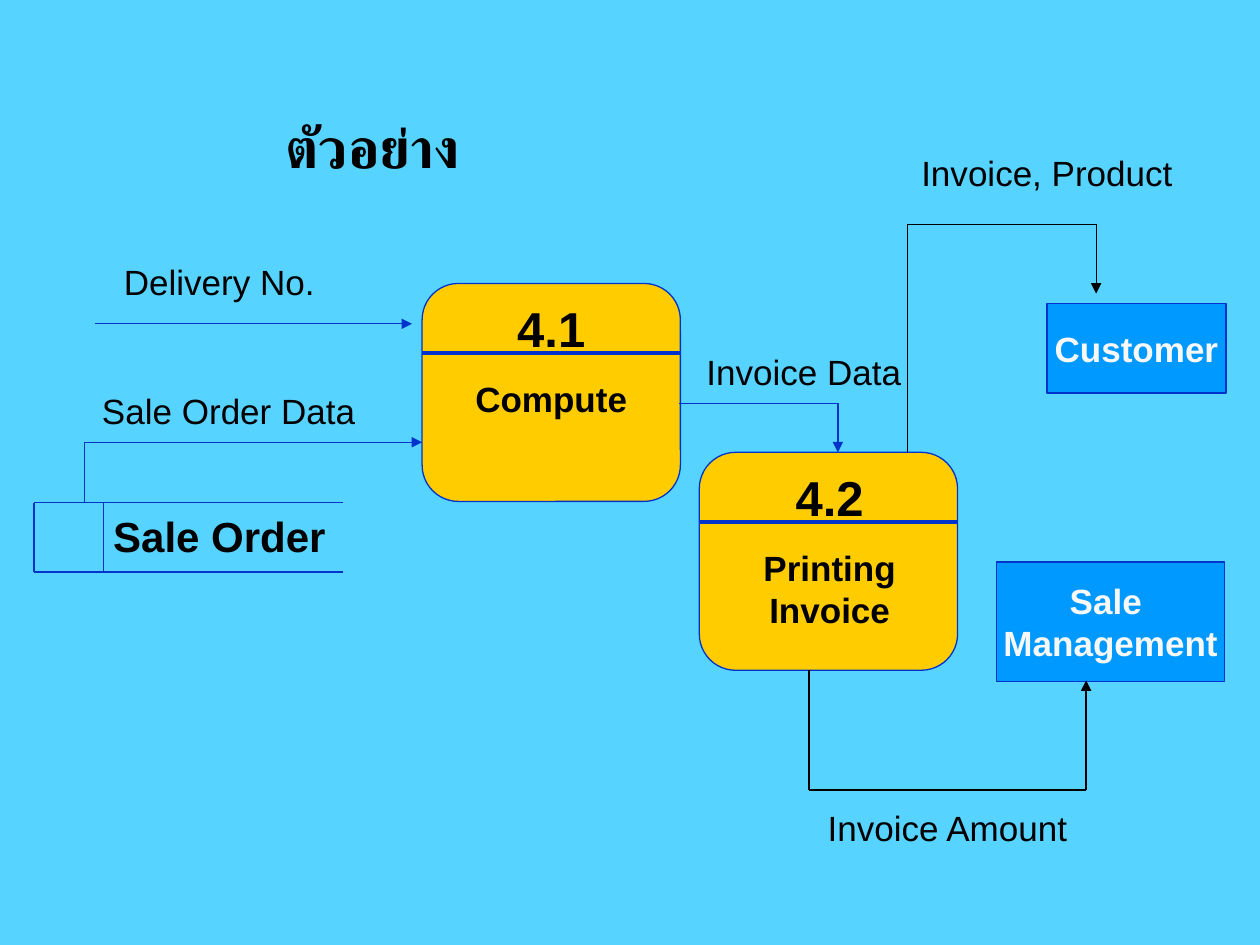
from dataclasses import dataclass
from itertools import pairwise

from lxml import etree
from pptx import Presentation
from pptx.dml.color import RGBColor
from pptx.enum.shapes import MSO_CONNECTOR as Connector, MSO_SHAPE as Shape
from pptx.enum.text import MSO_ANCHOR as Anchor, PP_ALIGN as Align
from pptx.oxml.ns import qn
from pptx.util import Inches, Pt

BLACK, BLUE, SKY = "000000", "0033CC", "57D3FF"
YELLOW, AZURE, WHITE = "FFCC00", "0099FF", "F8F8F8"

Point = tuple[float, float]
Box = tuple[float, float, float, float]


@dataclass
class Line:
    text: str
    size: float = 20
    bold: bool = False
    color: str = BLACK
    font: str = "Arial"
    space_before: float = 0


@dataclass
class Process:
    left: float
    top: float
    number: str
    name: list[str]
    text_box: Box


@dataclass
class Entity:
    box: Box
    name: list[str]


@dataclass
class Flow:
    points: list[Point]
    color: str


@dataclass
class Label:
    text: str
    box: Box


PROCESSES = [
    Process(3.35, 2.25, "4.1", ["Compute"], (3.67, 2.32, 1.41, 1.07)),
    Process(5.55, 3.59, "4.2", ["Printing", "Invoice"], (5.96, 3.66, 1.25, 1.4)),
]
ENTITIES = [
    Entity((8.31, 2.41, 1.42, 0.71), ["Customer"]),
    Entity((7.91, 4.46, 1.81, 0.95), ["Sale ", "Management"]),
]
FLOWS = [
    Flow([(0.67, 3.99), (0.67, 3.51), (3.35, 3.51)], BLUE),
    Flow([(0.75, 2.57), (3.27, 2.57)], BLUE),
    Flow([(5.39, 3.2), (6.65, 3.2), (6.65, 3.59)], BLUE),
    Flow([(7.2, 3.59), (7.2, 1.78), (8.7, 1.78), (8.7, 2.33)], BLACK),
    Flow([(6.42, 5.32), (6.42, 6.27), (8.62, 6.27), (8.62, 5.4)], BLACK),
]
LABELS = [
    Label("Delivery No.", (0.88, 2.02, 1.72, 0.43)),
    Label("Invoice Data", (5.46, 2.73, 1.84, 0.43)),
    Label("Sale Order Data", (0.66, 3.04, 2.31, 0.43)),
    Label("Invoice, Product", (7.13, 1.15, 2.36, 0.43)),
    Label("Invoice Amount", (6.34, 6.35, 2.36, 0.43)),
]


def rgb(value: str) -> RGBColor:
    return RGBColor.from_string(value)


def write(frame, lines: list[Line], align=Align.CENTER, anchor=Anchor.TOP, wrap=False) -> None:
    frame.word_wrap = wrap
    frame.vertical_anchor = anchor
    for index, line in enumerate(lines):
        paragraph = frame.add_paragraph() if index else frame.paragraphs[0]
        paragraph.alignment = align
        paragraph.space_before = Pt(line.space_before)
        run = paragraph.add_run()
        run.text = line.text
        run.font.name = line.font
        run.font.size = Pt(line.size)
        run.font.bold = line.bold
        run.font.color.rgb = rgb(line.color)


def add_text(shapes, box: Box, lines: list[Line], **layout):
    text_box = shapes.add_textbox(*map(Inches, box))
    write(text_box.text_frame, lines, **layout)
    return text_box


def add_block(shapes, kind: Shape, box: Box, fill: str):
    shape = shapes.add_shape(kind, *map(Inches, box))
    shape.shadow.inherit = False
    shape.fill.solid()
    shape.fill.fore_color.rgb = rgb(fill)
    shape.line.color.rgb = rgb(BLUE)
    shape.line.width = Pt(0.75)
    return shape


def add_line(shapes, start: Point, end: Point, color=BLUE, width=0.75, arrow=False) -> None:
    line = shapes.add_connector(Connector.STRAIGHT, *map(Inches, start + end))
    line.line.color.rgb = rgb(color)
    line.line.width = Pt(width)
    properties = line._element.spPr
    if arrow:
        etree.SubElement(properties.find(qn("a:ln")), qn("a:tailEnd"), type="triangle")
    etree.SubElement(properties, qn("a:effectLst"))


def add_flow(shapes, flow: Flow) -> None:
    """Draw the segments of a flow, with an arrowhead on the last one."""
    for start, end in pairwise(flow.points):
        add_line(shapes, start, end, flow.color, arrow=end == flow.points[-1])


def add_process(shapes, process: Process) -> None:
    width, height, header = 2.05, 1.73, 0.55
    group = shapes.add_group_shape().shapes
    add_block(group, Shape.ROUNDED_RECTANGLE, (process.left, process.top, width, height), YELLOW)
    divider = process.top + header
    add_line(group, (process.left, divider), (process.left + width, divider), width=2.25)
    first, *others = process.name
    lines = [Line(process.number, 28, True), Line(first, bold=True, space_before=11.5)]
    lines += [Line(text, bold=True) for text in others]
    add_text(group, process.text_box, lines)


def add_entity(shapes, entity: Entity) -> None:
    shape = add_block(shapes, Shape.RECTANGLE, entity.box, AZURE)
    lines = [Line(text, bold=True, color=WHITE) for text in entity.name]
    write(shape.text_frame, lines, anchor=Anchor.MIDDLE)


def add_data_store(shapes, name: str) -> None:
    """Draw an open-ended box with a narrow cell on its left."""
    left, cell, right, top, bottom = 0.27, 0.82, 2.72, 3.99, 4.54
    group = shapes.add_group_shape().shapes
    for y in (top, bottom):
        add_line(group, (left, y), (right, y))
    for x in (left, cell):
        add_line(group, (x, top), (x, bottom))
    add_text(group, (0.8, 4, 1.89, 0.5), [Line(name, 24, True)], align=Align.LEFT)


def main() -> None:
    presentation = Presentation()
    presentation.slide_width, presentation.slide_height = Inches(10), Inches(7.5)
    slide = presentation.slides.add_slide(presentation.slide_layouts[6])
    slide.background.fill.solid()
    slide.background.fill.fore_color.rgb = rgb(SKY)
    shapes = slide.shapes

    title = add_text(shapes, (2.17, 0.9, 6.33, 0.58),
                     [Line("ตัวอย่าง", 32, True, font="League Spartan")],
                     align=Align.LEFT, anchor=Anchor.MIDDLE, wrap=True)
    title.text_frame.paragraphs[0].line_spacing = 0.9

    for entity in ENTITIES:
        add_entity(shapes, entity)
    for process in PROCESSES:
        add_process(shapes, process)
    add_data_store(shapes, "Sale Order")
    for flow in FLOWS:
        add_flow(shapes, flow)
    for label in LABELS:
        add_text(shapes, label.box, [Line(label.text)])

    presentation.save("out.pptx")


if __name__ == "__main__":
    main()
